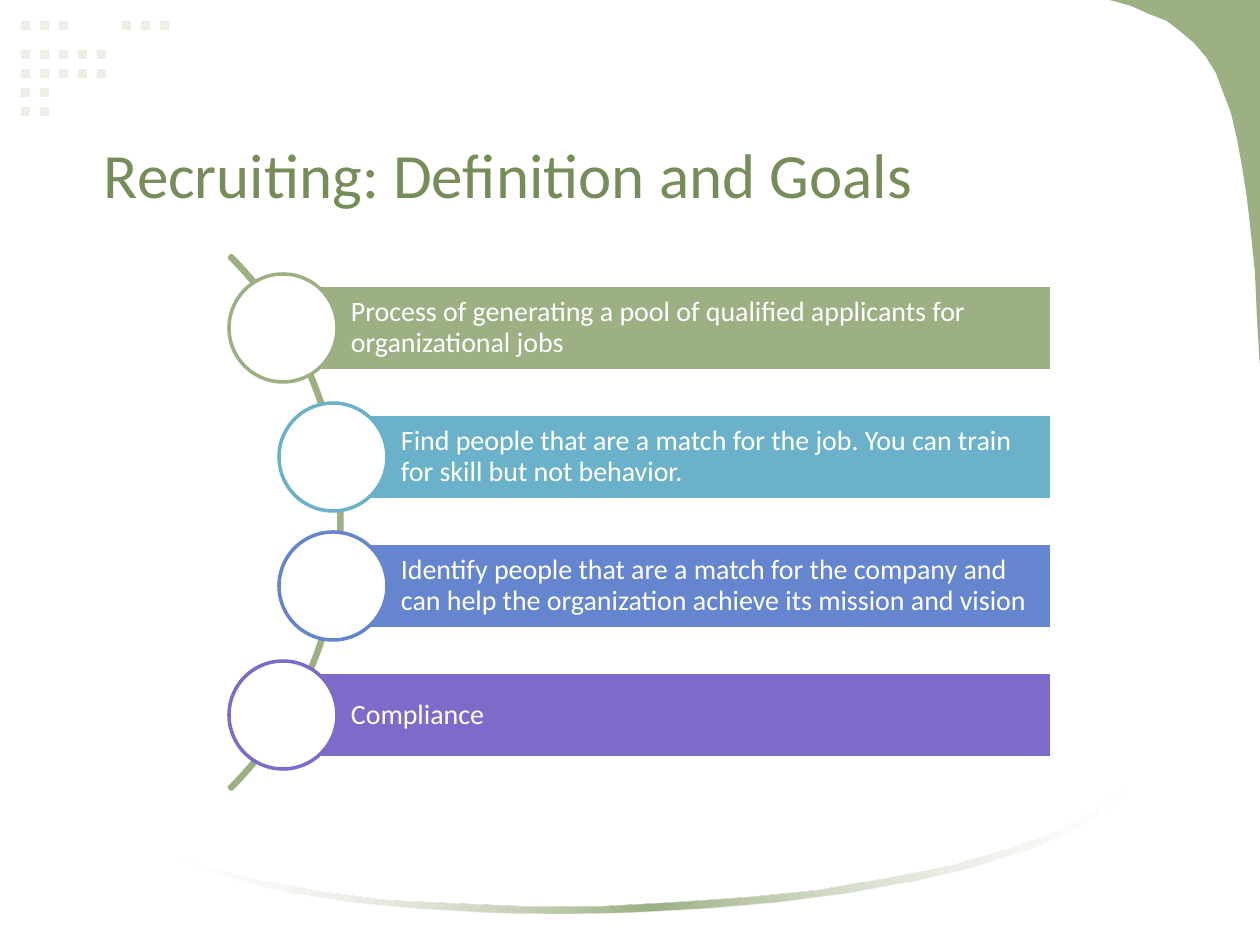
import pptx
import pptx.util
import pptx.dml.color
import pptx.enum.shapes
import pptx.enum.text
import pptx.oxml
import pptx.oxml.ns
import lxml.etree

SCALE = 914400 / 126
KIND = pptx.enum.shapes.MSO_SHAPE
HUE = {"green": "9CB084", "pale": "EBEFE6", "title": "768D5A", "white": "FFFFFF",
       "teal": "6BB1C9", "blue": "6585CF", "violet": "7E6BC9"}
rgb = {name: pptx.dml.color.RGBColor.from_string(code) for name, code in HUE.items()}


def write(frame, text, size=16, color="white", left=13, pad=6, space=1.0):
    frame.word_wrap = True
    frame.auto_size = pptx.enum.text.MSO_AUTO_SIZE.NONE
    frame.vertical_anchor = pptx.enum.text.MSO_ANCHOR.MIDDLE
    frame.margin_left = round(left * SCALE)
    frame.margin_right = frame.margin_top = frame.margin_bottom = round(pad * SCALE)
    para = frame.paragraphs[0]
    para.alignment = pptx.enum.text.PP_ALIGN.LEFT
    para.line_spacing = space
    run = para.add_run()
    run.text = text
    run.font.name = "Calibri"
    run.font.size = pptx.util.Pt(size)
    run.font.color.rgb = rgb[color]


def draw(kind, box, fill=None, line=None):
    """Add a preset shape at a px box, or a freeform when kind is a point list."""
    if isinstance(kind, list):
        form = slide.shapes.build_freeform(*kind[0], scale=SCALE)
        form.add_line_segments(kind[1:], close=True)
        shape = form.convert_to_shape()
    else:
        shape = slide.shapes.add_shape(kind, *[round(n * SCALE) for n in box])
    shape.shadow.inherit = False
    if fill:
        shape.fill.solid()
        shape.fill.fore_color.rgb = rgb[fill]
    else:
        shape.fill.background()
    if line:
        shape.line.color.rgb = rgb[line]
        shape.line.width = pptx.util.Pt(2)
    else:
        shape.line.fill.background()
    return shape


deck = pptx.Presentation()
deck.slide_width = round(1260 * SCALE)
deck.slide_height = round(945 * SCALE)
slide = deck.slides.add_slide(deck.slide_layouts[5])

# Pale squares, top left: row top and the left edges in that row
cols = [21 + 19 * i for i in range(5)]
grid = {21: cols[:3] + [122, 141, 160], 50: cols, 69: cols, 88: cols[:2], 107: cols[:2]}
for top, lefts in grid.items():
    for left in lefts:
        draw(KIND.RECTANGLE, (left, top, 9, 9), "pale")

# Green corner, top right
corner = [(1110, 0), (1260, 0), (1260, 367), (1257, 318), (1255, 273), (1251, 233),
          (1247, 198), (1242, 166), (1237, 139), (1231, 113), (1223, 92), (1216, 73),
          (1206, 57), (1194, 43), (1181, 32), (1167, 21), (1149, 14), (1131, 6)]
draw(corner, None, "green")

# Swoosh along the bottom, fading at both ends
swoosh = [(1124, 788), (1124, 796), (1110, 808), (1074, 830), (1028, 850), (974, 867),
          (914, 881), (848, 893), (777, 902), (706, 908), (631, 912), (558, 914),
          (485, 912), (416, 908), (352, 902), (292, 893), (241, 881), (197, 866),
          (179, 859), (179, 856), (218, 871), (267, 882), (324, 892), (387, 900),
          (454, 903), (525, 906), (599, 906), (673, 902), (747, 897), (818, 890),
          (886, 878), (949, 866), (1005, 850), (1055, 832), (1094, 811), (1110, 800)]
curve = draw(swoosh, None)
curve.fill.gradient()
curve.fill.gradient_angle = 0
qn = pptx.oxml.ns.qn
stops = curve.element.spPr.find(qn("a:gradFill")).find(qn("a:gsLst"))
for stop in list(stops):
    stops.remove(stop)
for pos, name, alpha in [(0, "white", 30), (50, "green", 100), (100, "white", 30)]:
    stop = lxml.etree.SubElement(stops, qn("a:gs"), pos=str(pos * 1000))
    tint = lxml.etree.SubElement(stop, qn("a:srgbClr"), val=HUE[name])
    lxml.etree.SubElement(tint, qn("a:alpha"), val=str(alpha * 1000))

# Title
title = slide.shapes.title
title.left, title.top, title.width, title.height = [
    round(n * SCALE) for n in (91, 105, 1084, 136)]
write(title.text_frame, "Recruiting: Definition and Goals", size=36, color="title")

# Arc behind the goals
arc = draw(KIND.BLOCK_ARC, (-413, 145, 755, 755), line="green")
for i, value in enumerate((189, 27, 0.004)):
    arc.adjustments[i] = value

# Goals: each bar starts at the centre of its circle
goals = [
    ("green", 283, "Process of generating a pool of qualified applicants for organizational jobs"),
    ("teal", 333, "Find people that are a match for the job. You can train for skill but not behavior."),
    ("blue", 333, "Identify people that are a match for the company and "
                  "can help the organization achieve its mission and vision"),
    ("violet", 283, "Compliance"),
]
right, high, size, step = 1052, 85, 108, 129
for i, (color, left, text) in enumerate(goals):
    mid = 328 + step * i
    bar = draw(KIND.RECTANGLE, (left, mid - high / 2, right - left, high), color, "white")
    write(bar.text_frame, text, left=68, pad=5, space=0.9)
    draw(KIND.OVAL, (left - size / 2, mid - size / 2, size, size), "white", color)

deck.save("out.pptx")
